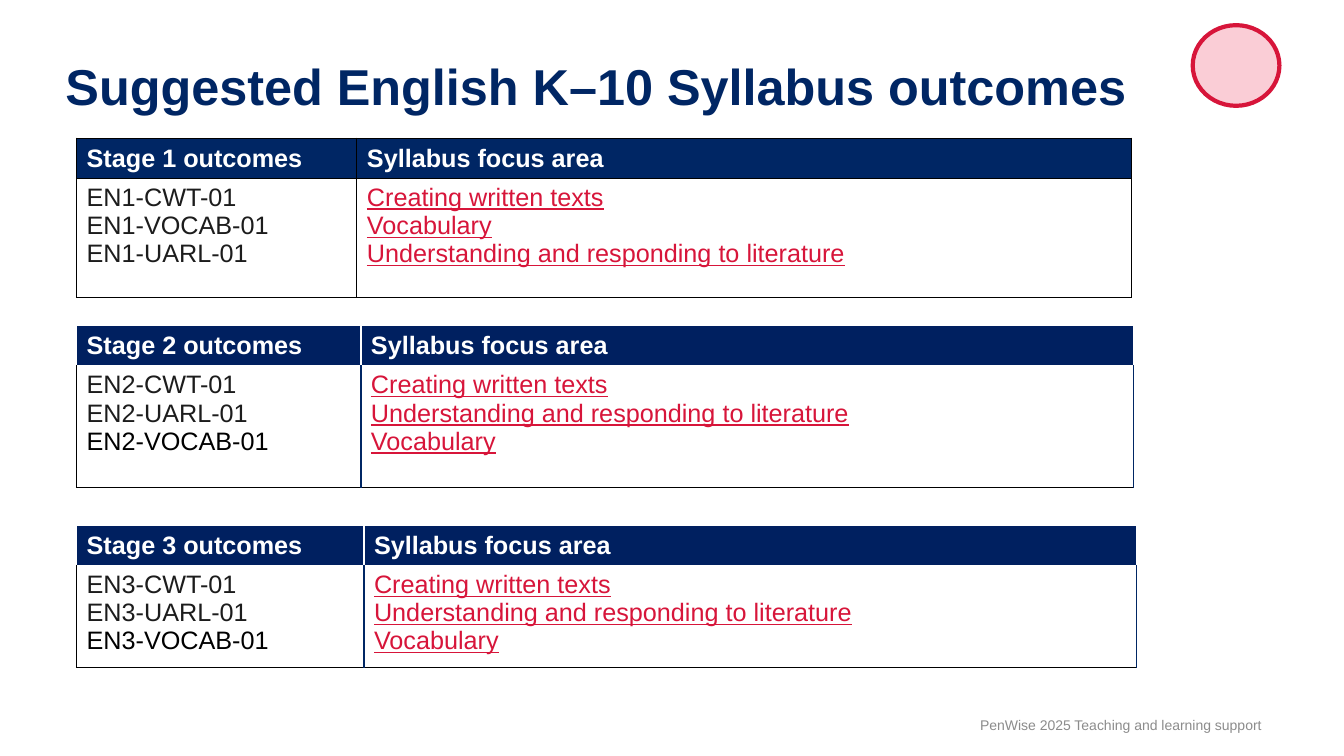
import pptx
import pptx.util
import pptx.dml.color
import pptx.enum.shapes
import pptx.enum.text
import pptx.oxml
from pptx.util import Inches

COLORS = {
    "navy": "002664", "deep navy": "002060", "red": "D7153A", "pink": "FACDD6",
    "ink": "1C1C1C", "black": "000000", "white": "FFFFFF", "grey": "8C8C8C",
}
ANCHOR = pptx.enum.text.MSO_ANCHOR
DRAWING_NS = "http://schemas.openxmlformats.org/drawingml/2006/main"


def rgb(color):
    return pptx.dml.color.RGBColor.from_string(COLORS[color])


def write(frame, lines, size, colors, bold=False, underline=False):
    """Put one paragraph per line into the frame, each in its own colour."""
    frame.text = "\n".join(lines)
    for paragraph, color in zip(frame.paragraphs, colors):
        font = paragraph.font
        font.name, font.size, font.bold = "Arial", pptx.util.Pt(size), bold
        font.color.rgb = rgb(color)
        if underline:
            font.underline = True


presentation = pptx.Presentation()
presentation.slide_width, presentation.slide_height = Inches(13.33), Inches(7.5)
slide = presentation.slides.add_slide(presentation.slide_layouts[6])

# Title and footer
heading = slide.shapes.add_textbox(Inches(0.65), Inches(0.61), Inches(12.04), Inches(0.55)).text_frame
footer = slide.shapes.add_textbox(Inches(8.01), Inches(7.11), Inches(4.5), Inches(0.17)).text_frame
for frame in (heading, footer):
    frame.word_wrap = True
    frame.margin_left = frame.margin_right = frame.margin_top = frame.margin_bottom = 0
write(heading, ["Suggested English K–10 Syllabus outcomes"], 36, ["navy"], bold=True)
heading.paragraphs[0].line_spacing = 0.9
write(footer, ["PenWise 2025 Teaching and learning support"], 10, ["grey"])
footer.vertical_anchor = ANCHOR.BOTTOM
footer.paragraphs[0].alignment = pptx.enum.text.PP_ALIGN.RIGHT

# Corner circle
circle = slide.shapes.add_shape(
    pptx.enum.shapes.MSO_SHAPE.OVAL, Inches(11.83), Inches(0.25), Inches(0.86), Inches(0.8))
circle.shadow.inherit = False
circle.fill.solid()
circle.fill.fore_color.rgb = rgb("pink")
circle.line.color.rgb = rgb("red")
circle.line.width = pptx.util.Pt(3)

# Outcome tables: each code belongs to one focus area
focus_areas = {
    "CWT": "Creating written texts",
    "VOCAB": "Vocabulary",
    "UARL": "Understanding and responding to literature",
}
# Border colours of each cell, in the order left, right, top, bottom
boxed = [[["black"] * 4] * 2] * 2
open_top = [
    [["white"] * 4] * 2,
    [["black", "navy", "white", "black"], ["navy", "navy", "white", "black"]],
]
# Top, column widths, row heights, header fill, codes, code colours, borders
stages = [
    (1.37, (2.78, 7.68), (0.38, 1.18), "navy",
     ("CWT", "VOCAB", "UARL"), ("ink", "ink", "ink"), boxed),
    (3.23, (2.82, 7.66), (0.37, 1.21), "deep navy",
     ("CWT", "UARL", "VOCAB"), ("ink", "ink", "black"), open_top),
    (5.21, (2.85, 7.66), (0.37, 1.01), "deep navy",
     ("CWT", "UARL", "VOCAB"), ("ink", "ink", "black"), open_top),
]
for stage, (top, widths, heights, header_fill, codes, code_colors, borders) in enumerate(stages, 1):
    outcomes = slide.shapes.add_table(
        2, 2, Inches(0.76), Inches(top), Inches(sum(widths)), Inches(sum(heights))).table
    outcomes.first_row = outcomes.horz_banding = False
    for column, width in zip(outcomes.columns, widths):
        column.width = Inches(width)
    for row, height in zip(outcomes.rows, heights):
        row.height = Inches(height)

    # Cell borders come before the fill
    for r, row_borders in enumerate(borders):
        for c, sides in enumerate(row_borders):
            cell = outcomes.cell(r, c)
            properties = cell._tc.get_or_add_tcPr()
            for side, color in zip("LRTB", sides):
                properties.append(pptx.oxml.parse_xml(
                    f'<a:ln{side} xmlns:a="{DRAWING_NS}" w="12700"><a:solidFill>'
                    f'<a:srgbClr val="{COLORS[color]}"/></a:solidFill></a:ln{side}>'))
            if r == 0:
                cell.fill.solid()
                cell.fill.fore_color.rgb = rgb(header_fill)
                cell.vertical_anchor = ANCHOR.MIDDLE
            else:
                cell.fill.background()

    # Cell text
    for c, header in enumerate((f"Stage {stage} outcomes", "Syllabus focus area")):
        write(outcomes.cell(0, c).text_frame, [header], 18, ["white"], bold=True)
    write(outcomes.cell(1, 0).text_frame, [f"EN{stage}-{code}-01" for code in codes], 18, code_colors)
    write(outcomes.cell(1, 1).text_frame, [focus_areas[code] for code in codes], 18,
          ["red"] * 3, underline=True)

presentation.save("out.pptx")
